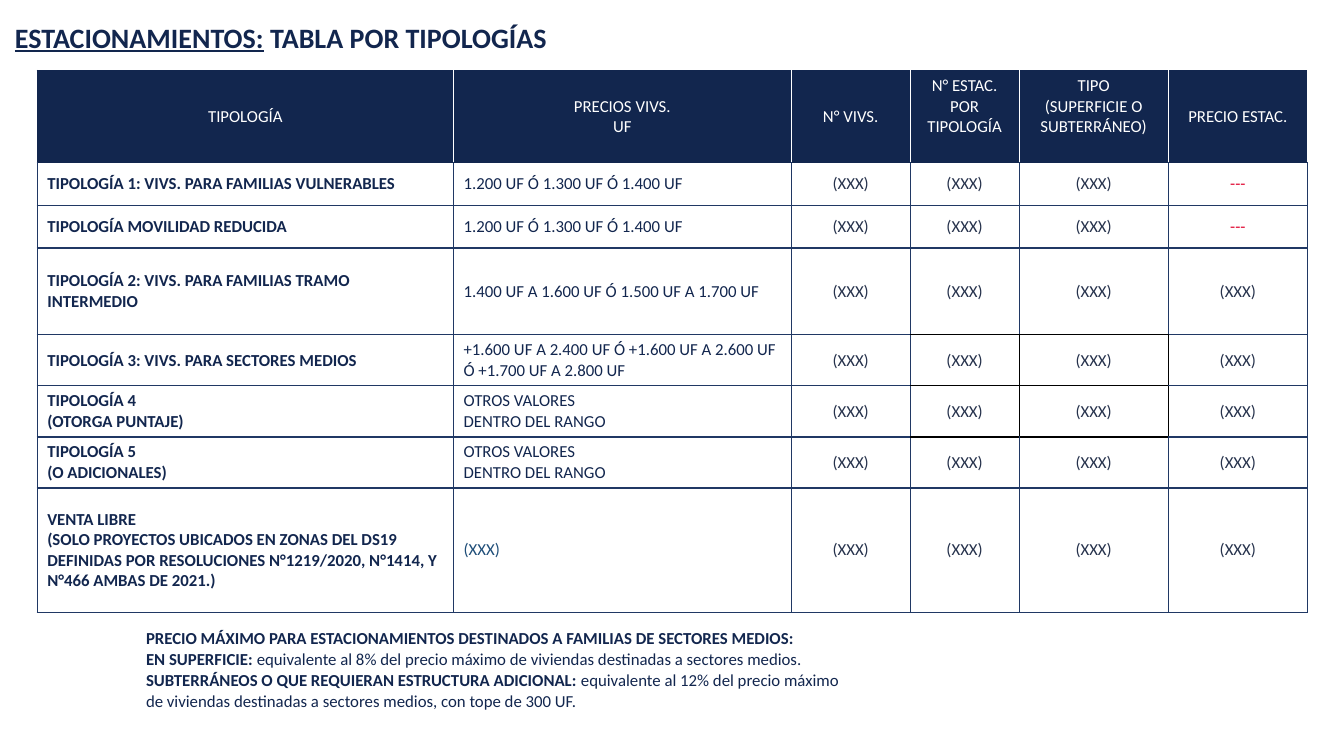
from lxml import etree
from pptx import Presentation
from pptx.dml.color import RGBColor
from pptx.enum import text
from pptx.oxml.ns import qn
from pptx.util import Pt

COLORS = {"navy": "12264E", "border": "203864", "black": "000000", "white": "FFFFFF",
          "slate": "26324C", "red": "E00630", "blue": "1F4E79"}
COLUMN_WIDTHS = [297.4, 241.2, 85, 77.8, 106.6, 99.4]
ROW_HEIGHTS = [65.8, 30.5, 30.5, 62, 36.5, 36.5, 36.5, 88.7]
PENDING = "(XXX)"
NO_PRICE = "---"
HEADER = ["TIPOLOGÍA", "PRECIOS VIVS.\nUF", "N° VIVS.", "N° ESTAC.\nPOR TIPOLOGÍA",
          "TIPO\n(SUPERFICIE O SUBTERRÁNEO)", "PRECIO ESTAC."]
LOW_PRICES = "1.200 UF Ó 1.300 UF Ó 1.400 UF"
OTHER_PRICES = "OTROS VALORES\nDENTRO DEL RANGO"
TYPOLOGIES = [
    ("TIPOLOGÍA 1: VIVS. PARA FAMILIAS VULNERABLES", LOW_PRICES, NO_PRICE),
    ("TIPOLOGÍA MOVILIDAD REDUCIDA", LOW_PRICES, NO_PRICE),
    ("TIPOLOGÍA 2: VIVS. PARA FAMILIAS TRAMO INTERMEDIO",
     "1.400 UF A 1.600 UF Ó 1.500 UF A 1.700 UF", PENDING),
    ("TIPOLOGÍA 3: VIVS. PARA SECTORES MEDIOS",
     "+1.600 UF A 2.400 UF Ó +1.600 UF A 2.600 UF Ó +1.700 UF A 2.800 UF", PENDING),
    ("TIPOLOGÍA 4\n(OTORGA PUNTAJE)", OTHER_PRICES, PENDING),
    ("TIPOLOGÍA 5\n(O ADICIONALES)", OTHER_PRICES, PENDING),
    ("VENTA LIBRE\n(SOLO PROYECTOS UBICADOS EN ZONAS DEL DS19 DEFINIDAS POR "
     "RESOLUCIONES N°1219/2020, N°1414, Y N°466 AMBAS DE 2021.)", PENDING, PENDING),
]
NOTES = [
    [("PRECIO MÁXIMO PARA ESTACIONAMIENTOS DESTINADOS A FAMILIAS DE SECTORES MEDIOS:", True)],
    [("EN SUPERFICIE: ", True),
     ("equivalente al 8% del precio máximo de viviendas destinadas a sectores medios.", False)],
    [("SUBTERRÁNEOS O QUE REQUIERAN ESTRUCTURA ADICIONAL: ", True),
     ("equivalente al 12% del precio máximo de viviendas destinadas a sectores medios, "
      "con tope de 300 UF.", False)],
]


def horizontal_color(line, column):
    """Colour of the rule above row number `line`."""
    if line <= 1:
        return "navy"
    return "black" if line in (4, 5, 6) and column in (3, 4) else "border"


def vertical_color(row, line):
    """Colour of the rule left of column number `line`."""
    if row == 0:
        return "white" if line else "navy"
    return "black" if row in (4, 5) and line in (4, 5) else "border"


def text_color(row, column, words):
    if row == 0:
        return "white"
    if words == NO_PRICE:
        return "red"
    if column == 1 and words == PENDING:
        return "blue"
    return "navy" if column < 2 else "slate"


class Page:
    def __init__(self, deck, font):
        self.slide = deck.slides.add_slide(deck.slide_layouts[6])
        self.font = font

    def style(self, paragraph, size, color, bold=None):
        font = paragraph.font
        font.name, font.size, font.bold = self.font, Pt(size), bold
        font.color.rgb = RGBColor.from_string(COLORS[color])

    def text_box(self, left, top, width, height, paragraphs, size, spacing=None):
        """Each paragraph is a list of (words, bold, underline) spans."""
        box = self.slide.shapes.add_textbox(Pt(left), Pt(top), Pt(width), Pt(height))
        frame = box.text_frame
        frame.word_wrap = True
        for index, spans in enumerate(paragraphs):
            paragraph = frame.add_paragraph() if index else frame.paragraphs[0]
            self.style(paragraph, size, "navy")
            if spacing:
                paragraph.line_spacing = Pt(spacing)
            for words, bold, underline in spans:
                span = paragraph.add_run()
                span.text = words
                span.font.bold, span.font.underline = bold, underline

    def border(self, cell, colors):
        properties = cell._tc.get_or_add_tcPr()
        for index, (side, color) in enumerate(zip("LRTB", colors)):
            line = etree.Element(qn(f"a:ln{side}"), w=str(Pt(1)))
            fill = etree.SubElement(line, qn("a:solidFill"))
            etree.SubElement(fill, qn("a:srgbClr"), val=COLORS[color])
            properties.insert(index, line)

    def cell(self, cell, row, column, words):
        cell.text = words
        cell.vertical_anchor = text.MSO_ANCHOR.MIDDLE
        if row == 0:
            cell.fill.solid()
            cell.fill.fore_color.rgb = RGBColor.from_string(COLORS["navy"])
            if column in (3, 4):
                cell.margin_bottom = Pt(18.2)
        else:
            cell.fill.background()
        for paragraph in cell.text_frame.paragraphs:
            self.style(paragraph, 12, text_color(row, column, words), row > 0 and column == 0)
            if row == 0 or column > 1:
                paragraph.alignment = text.PP_ALIGN.CENTER
        self.border(cell, [vertical_color(row, column), vertical_color(row, column + 1),
                           horizontal_color(row, column), horizontal_color(row + 1, column)])

    def table(self, left, top, widths, heights, rows):
        table = self.slide.shapes.add_table(
            len(heights), len(widths), Pt(left), Pt(top), Pt(sum(widths)), Pt(sum(heights))).table
        table.first_row = table.horz_banding = False
        for column, width in zip(table.columns, widths):
            column.width = Pt(width)
        for row, height in zip(table.rows, heights):
            row.height = Pt(height)
        for r, row in enumerate(rows):
            for c, words in enumerate(row):
                self.cell(table.cell(r, c), r, c, words)


def main():
    deck = Presentation()
    deck.slide_width, deck.slide_height = Pt(960), Pt(540)
    page = Page(deck, "Calibri")
    rows = [HEADER] + [[name, prices, PENDING, PENDING, PENDING, parking]
                       for name, prices, parking in TYPOLOGIES]
    page.table(26.6, 50.4, COLUMN_WIDTHS, ROW_HEIGHTS, rows)
    notes = [[(words, bold, None) for words, bold in spans] for spans in NOTES]
    page.text_box(97.2, 444.2, 517.7, 67.7, notes, 12, spacing=15)
    title = [("ESTACIONAMIENTOS:", True, True), (" TABLA POR TIPOLOGÍAS", True, None)]
    page.text_box(3.6, 10.8, 433.4, 31.7, [title], 20)
    deck.save("out.pptx")


if __name__ == "__main__":
    main()
